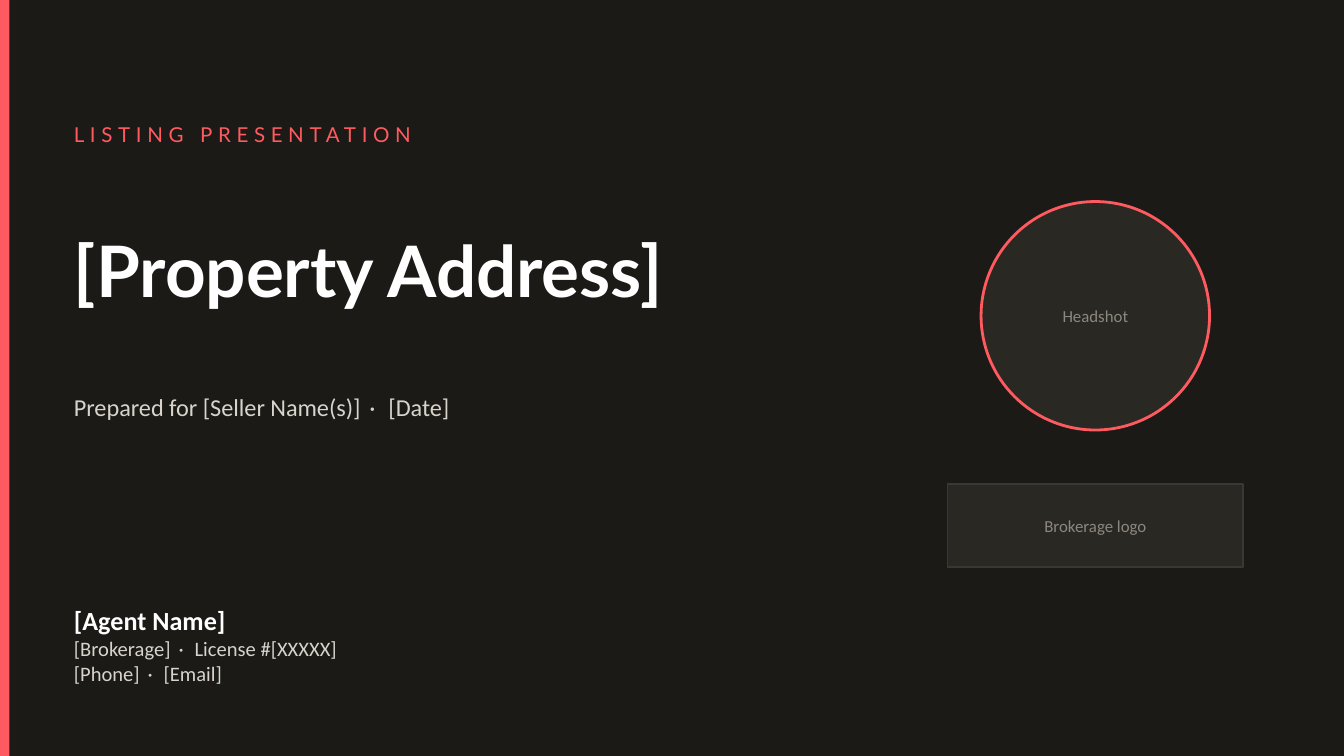
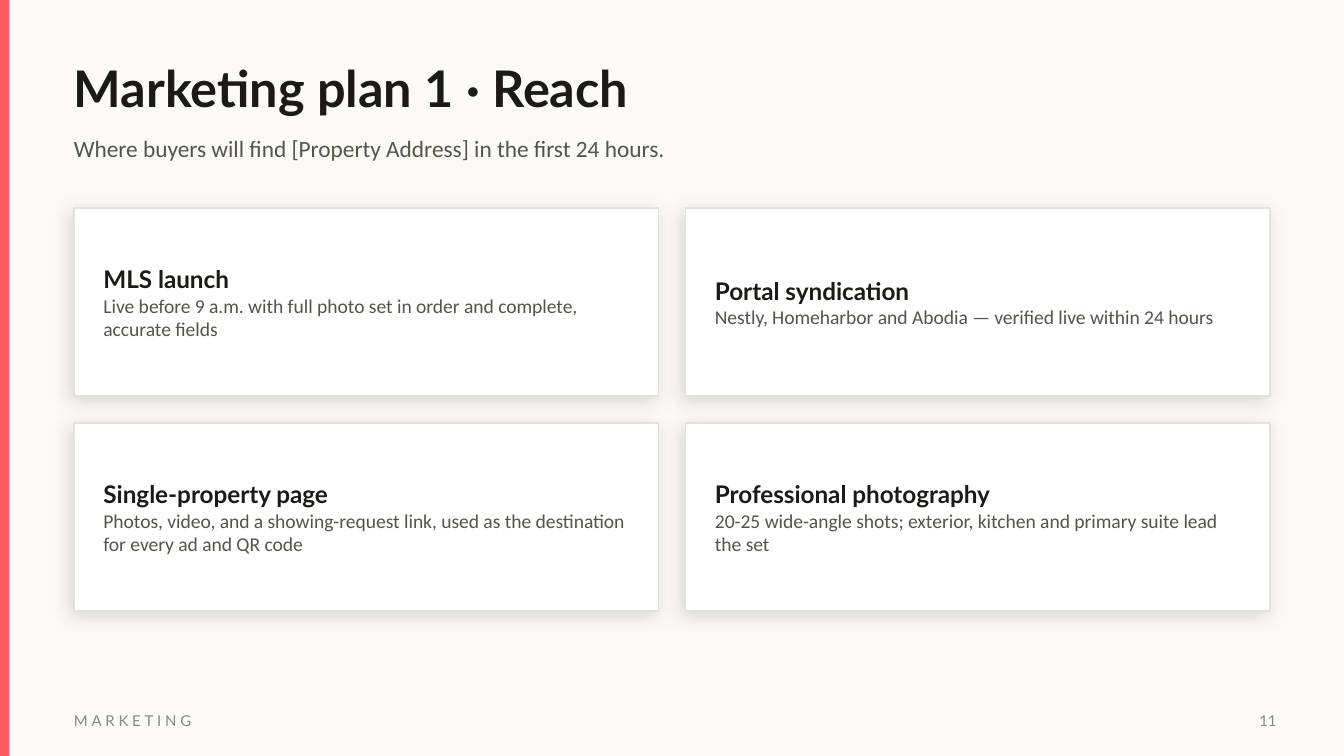
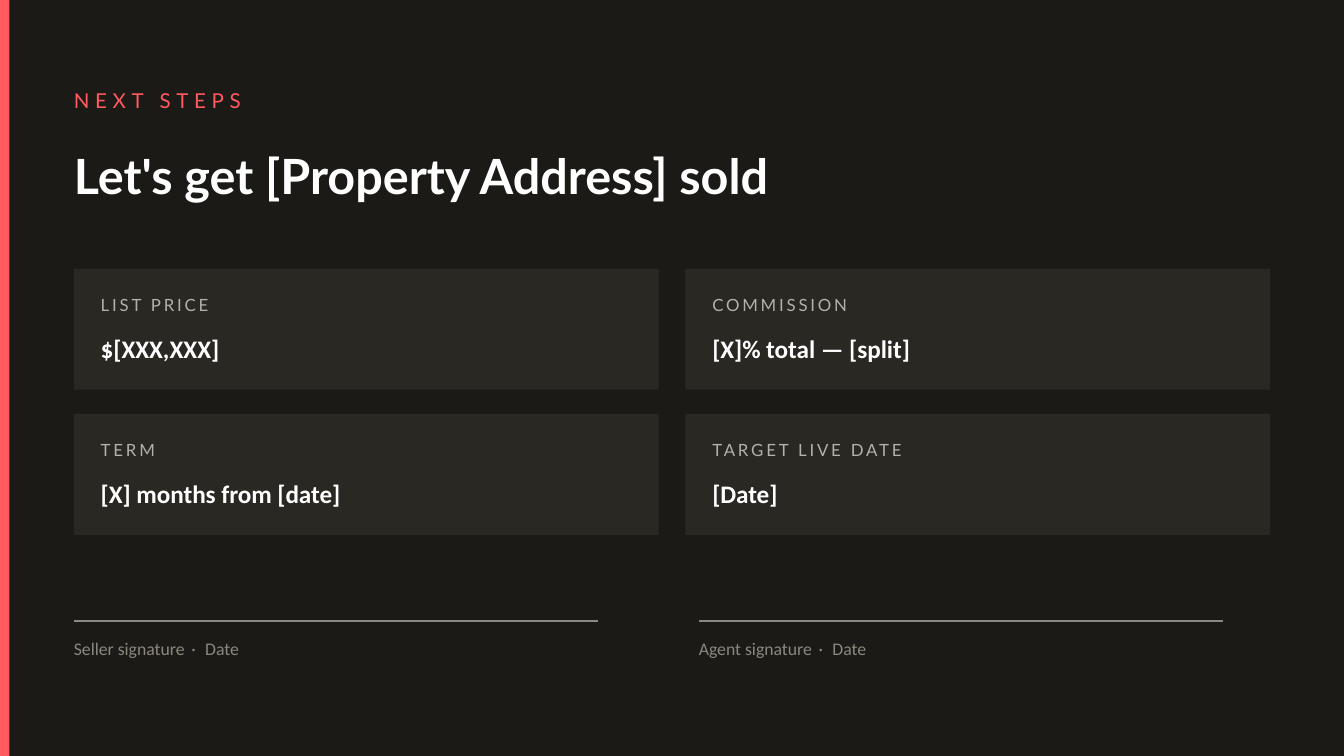
from dataclasses import dataclass

from lxml import etree
from pptx import Presentation
from pptx.dml.color import RGBColor
from pptx.enum.shapes import MSO_CONNECTOR, MSO_SHAPE
from pptx.enum.text import MSO_ANCHOR, MSO_AUTO_SIZE, PP_ALIGN
from pptx.oxml.ns import qn
from pptx.util import Pt

CORAL = RGBColor(0xFF, 0x5A, 0x5F)
INK = RGBColor(0x1B, 0x1A, 0x16)
PAPER = RGBColor(0xFB, 0xFA, 0xF8)
WHITE = RGBColor(0xFF, 0xFF, 0xFF)
CHARCOAL = RGBColor(0x2A, 0x28, 0x23)
CHARCOAL_EDGE = RGBColor(0x3A, 0x38, 0x33)
CARD_EDGE = RGBColor(0xE5, 0xE1, 0xDA)
BODY_GREY = RGBColor(0x57, 0x53, 0x4B)
MUTED = RGBColor(0x8C, 0x88, 0x7F)
LABEL_GREY = RGBColor(0xB5, 0xB1, 0xA8)
SAND = RGBColor(0xD8, 0xD4, 0xCC)
SHADOW = RGBColor(0x14, 0x12, 0x10)

HEADING_FONT = "Lato"
BODY_FONT = "Calibri"

SLIDE_WIDTH, SLIDE_HEIGHT = 720, 405
MARGIN = 39.6
CONTENT_WIDTH = SLIDE_WIDTH - 2 * MARGIN
GUTTER = 14.4
COLUMN_WIDTH = (CONTENT_WIDTH - GUTTER) / 2
CARD_TEXT_WIDTH = 280.8
DOT = " · "


@dataclass(frozen=True)
class TextStyle:
    size: float
    color: RGBColor
    font: str = BODY_FONT
    bold: bool = False
    tracking: float = 0


EYEBROW = TextStyle(11, CORAL, HEADING_FONT, tracking=3)
COVER_TITLE = TextStyle(38, WHITE, HEADING_FONT, bold=True)
PAGE_TITLE = TextStyle(27, INK, HEADING_FONT, bold=True)
CLOSING_TITLE = TextStyle(26, WHITE, HEADING_FONT, bold=True)
PREPARED_FOR = TextStyle(13, SAND)
AGENT_NAME = TextStyle(14, WHITE, bold=True)
AGENT_DETAIL = TextStyle(11, SAND)
SLOT_LABEL = TextStyle(9, MUTED)
SUBTITLE = TextStyle(12.5, BODY_GREY)
SECTION = TextStyle(8, MUTED, HEADING_FONT, tracking=2)
PAGE_NUMBER = TextStyle(8, MUTED, HEADING_FONT)
CARD_HEADING = TextStyle(13, INK, HEADING_FONT, bold=True)
CARD_BODY = TextStyle(10.5, BODY_GREY)
TERM_LABEL = TextStyle(9, LABEL_GREY, HEADING_FONT, tracking=1.5)
TERM_VALUE = TextStyle(13.5, WHITE, bold=True)
SIGNATURE = TextStyle(9.5, MUTED)


def two_column_cells(items, top, height, gap):
    """Yield left, top and item for a grid filled row by row."""
    for index, item in enumerate(items):
        row, column = divmod(index, 2)
        yield (MARGIN + column * (COLUMN_WIDTH + GUTTER),
               top + row * (height + gap), item)


def points(*lengths):
    return [Pt(length) for length in lengths]


class Deck:
    def __init__(self):
        self.presentation = Presentation()
        self.presentation.slide_width = Pt(SLIDE_WIDTH)
        self.presentation.slide_height = Pt(SLIDE_HEIGHT)
        self.slide = None

    def new_slide(self, background):
        """Start a title-only slide with the coral band at its left edge."""
        title_only = self.presentation.slide_layouts[5]
        self.slide = self.presentation.slides.add_slide(title_only)
        fill = self.slide.background.fill
        fill.solid()
        fill.fore_color.rgb = background
        self.panel((0, 0, 5.04, SLIDE_HEIGHT), CORAL)

    def panel(self, box, color, edge=None, edge_width=1, kind=MSO_SHAPE.RECTANGLE):
        panel = self.slide.shapes.add_shape(kind, *points(*box))
        panel.shadow.inherit = False
        panel.fill.solid()
        panel.fill.fore_color.rgb = color
        if edge is None:
            panel.line.fill.background()
        else:
            panel.line.color.rgb = edge
            panel.line.width = Pt(edge_width)
        return panel

    def raised_card(self, box):
        """Draw a white card with a soft shadow."""
        card = self.panel(box, WHITE, CARD_EDGE)
        effects = card._element.spPr.find(qn("a:effectLst"))
        shadow = etree.SubElement(
            effects, qn("a:outerShdw"), blurRad=str(Pt(10)), dist=str(Pt(3)),
            dir=str(135 * 60000), algn="bl", rotWithShape="0")
        color = etree.SubElement(shadow, qn("a:srgbClr"), val=str(SHADOW))
        etree.SubElement(color, qn("a:alpha"), val="14000")

    def title(self, box, wording, style):
        title = self.slide.shapes.title
        title.left, title.top, title.width, title.height = points(*box)
        self.fill_frame(title.text_frame, [(wording, style)])

    def text(self, box, *lines, align=PP_ALIGN.LEFT):
        """Add a text box from (wording, style) lines."""
        frame = self.slide.shapes.add_textbox(*points(*box)).text_frame
        self.fill_frame(frame, lines, align)

    def fill_frame(self, frame, lines, align=PP_ALIGN.LEFT):
        frame.word_wrap = True
        frame.auto_size = MSO_AUTO_SIZE.NONE
        frame.vertical_anchor = MSO_ANCHOR.MIDDLE
        frame.margin_left = frame.margin_right = 0
        frame.margin_top = frame.margin_bottom = 0
        for index, (wording, style) in enumerate(lines):
            paragraph = frame.paragraphs[0] if index == 0 else frame.add_paragraph()
            paragraph.alignment = align
            before, dot, after = wording.partition(DOT)
            for part in filter(None, (before, dot, after)):
                run = paragraph.add_run()
                run.text = part
                run.font.size = Pt(style.size)
                run.font.name = style.font
                run.font.bold = style.bold
                run.font.color.rgb = style.color
                tracking = style.tracking
                if part == DOT and style.font == BODY_FONT:
                    tracking = 0.15 * style.size  # airy separator in body text
                if tracking:
                    run.font._element.set("spc", str(round(tracking * 100)))

    def rule(self, left, top, width, color):
        rule = self.slide.shapes.add_connector(
            MSO_CONNECTOR.STRAIGHT, *points(left, top, left + width, top))
        rule.line.color.rgb = color
        rule.line.width = Pt(1)
        etree.SubElement(rule._element.spPr, qn("a:effectLst"))

    def footer(self, section, number):
        top, height = 375.12, 21.6
        self.text((MARGIN, top, 360, height), (section, SECTION))
        self.text((648, top, 36, height), (number, PAGE_NUMBER), align=PP_ALIGN.RIGHT)


def add_cover(deck):
    deck.new_slide(INK)
    deck.text((MARGIN, 61.2, 432, 21.6), ("LISTING PRESENTATION", EYEBROW))
    deck.title((MARGIN, 90, 460.8, 108), "[Property Address]", COVER_TITLE)
    deck.text((MARGIN, 205.2, 432, 25.2),
              ("Prepared for [Seller Name(s)] · [Date]", PREPARED_FOR))
    deck.text((MARGIN, 313.2, 360, 64.8),
              ("[Agent Name]", AGENT_NAME),
              ("[Brokerage] · License #[XXXXX]", AGENT_DETAIL),
              ("[Phone] · [Email]", AGENT_DETAIL))
    deck.panel((525.6, 108, 122.4, 122.4), CHARCOAL, CORAL, 1.5, MSO_SHAPE.OVAL)
    deck.text((525.6, 158.4, 122.4, 21.6), ("Headshot", SLOT_LABEL),
              align=PP_ALIGN.CENTER)
    deck.panel((507.6, 259.2, 158.4, 44.64), CHARCOAL, CHARCOAL_EDGE)
    deck.text((507.6, 270.72, 158.4, 21.6), ("Brokerage logo", SLOT_LABEL),
              align=PP_ALIGN.CENTER)


def add_reach(deck):
    deck.new_slide(PAPER)
    deck.footer("MARKETING", "11")
    deck.title((MARGIN, 24.48, CONTENT_WIDTH, 44.64),
               "Marketing plan 1 · Reach", PAGE_TITLE)
    deck.text((MARGIN, 67.68, CONTENT_WIDTH, 23.04),
              ("Where buyers will find [Property Address] in the first 24 hours.",
               SUBTITLE))
    channels = [
        ("MLS launch",
         "Live before 9 a.m. with full photo set in order and complete, "
         "accurate fields"),
        ("Portal syndication",
         "Nestly, Homeharbor and Abodia — verified live within 24 hours"),
        ("Single-property page",
         "Photos, video, and a showing-request link, used as the destination "
         "for every ad and QR code"),
        ("Professional photography",
         "20-25 wide-angle shots; exterior, kitchen and primary suite lead "
         "the set"),
    ]
    height = 100.8
    for left, top, (channel, promise) in two_column_cells(channels, 111.6, height, 14.4):
        deck.raised_card((left, top, COLUMN_WIDTH, height))
        deck.text((left + 15.84, top + 10.8, CARD_TEXT_WIDTH, height - 21.6),
                  (channel, CARD_HEADING), (promise, CARD_BODY))


def add_next_steps(deck):
    deck.new_slide(INK)
    deck.text((MARGIN, 43.2, 432, 21.6), ("NEXT STEPS", EYEBROW))
    deck.title((MARGIN, 70.56, CONTENT_WIDTH, 46.8),
               "Let's get [Property Address] sold", CLOSING_TITLE)
    terms = [
        ("LIST PRICE", "$[XXX,XXX]"),
        ("COMMISSION", "[X]% total — [split]"),
        ("TERM", "[X] months from [date]"),
        ("TARGET LIVE DATE", "[Date]"),
    ]
    height = 64.8
    for left, top, (term, value) in two_column_cells(terms, 144, height, 12.96):
        deck.panel((left, top, COLUMN_WIDTH, height), CHARCOAL)
        deck.text((left + 14.4, top + 10.8, CARD_TEXT_WIDTH, 17.28), (term, TERM_LABEL))
        deck.text((left + 14.4, top + 30.24, CARD_TEXT_WIDTH, 24.48), (value, TERM_VALUE))
    for index, signer in enumerate(("Seller", "Agent")):
        left = MARGIN + index * 334.8
        deck.rule(left, 332.64, CARD_TEXT_WIDTH, MUTED)
        deck.text((left, 338.4, CARD_TEXT_WIDTH, 18),
                  (f"{signer} signature · Date", SIGNATURE))


def main():
    deck = Deck()
    add_cover(deck)
    add_reach(deck)
    add_next_steps(deck)
    deck.presentation.save("out.pptx")


if __name__ == "__main__":
    main()
